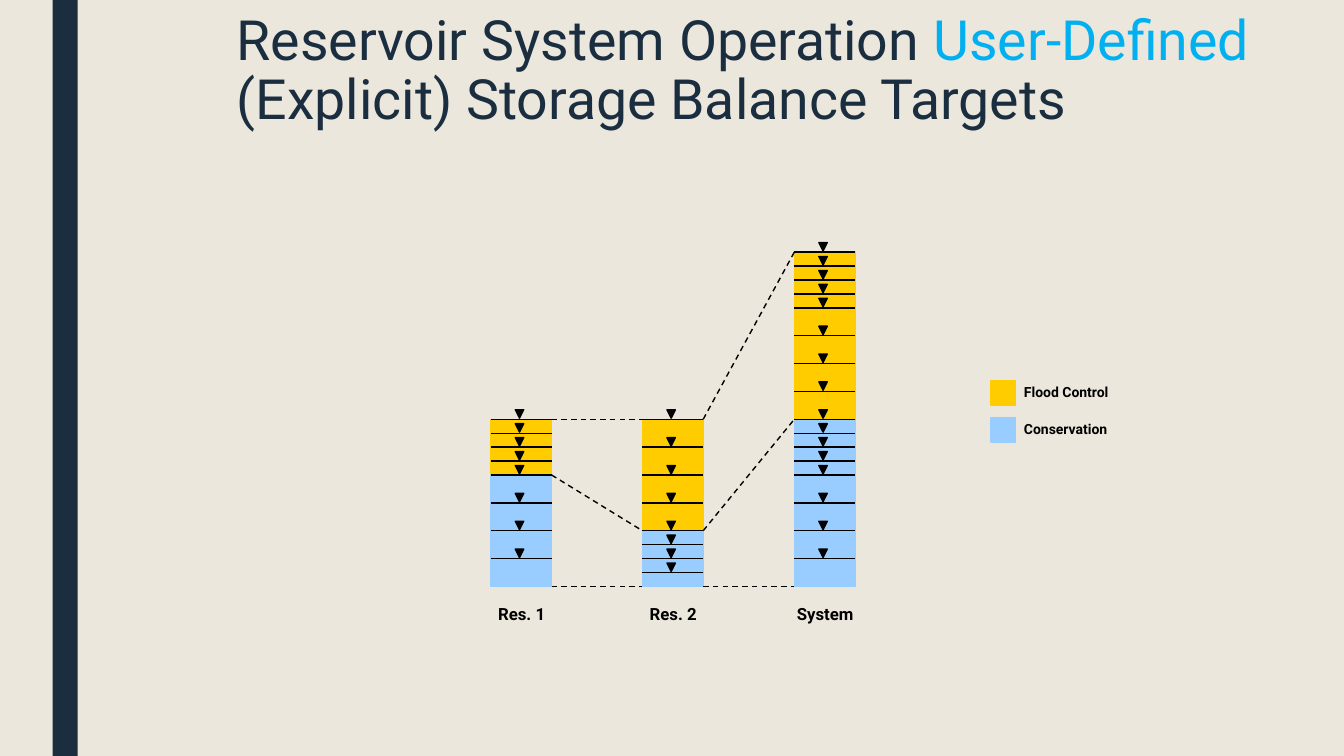
"""Build the reservoir storage balance slide."""
from dataclasses import dataclass
from itertools import accumulate

from lxml import etree
from pptx import Presentation
from pptx.dml import color
from pptx.enum import dml, shapes, text
from pptx.oxml import ns
from pptx.util import Pt


@dataclass(frozen=True)
class Theme:
    """Colours and type sizes of the slide."""
    background: str = "EBE7DD"
    navy: str = "1A2E40"
    accent: str = "00B0F0"
    flood: str = "FFCC00"
    conservation: str = "99CCFF"
    ink: str = "000000"
    font: str = "Roboto"
    title_size: float = 39.6
    label_size: float = 12
    legend_size: float = 10


THEME = Theme()
BASE = 418.9
STEP = 9.95
BAR_WIDTH = 43.4
SMALL, LARGE = [1] * 4, [2] * 4
RESERVOIRS = [
    ("Res. 1", 350.6, LARGE, SMALL),
    ("Res. 2", 458.9, SMALL, LARGE),
    ("System", 567.4, LARGE + SMALL, LARGE + SMALL),
]


def rgb(value):
    """Return a colour from its hex text."""
    return color.RGBColor.from_string(value)


def level(units):
    """Return the vertical position of a storage level above the base."""
    return BASE - STEP * units


def add_block(slide, left, top, width, height, fill, kind=shapes.MSO_SHAPE.RECTANGLE, outlined=True):
    """Add a filled shape, outlined in its own colour if asked."""
    shape = slide.shapes.add_shape(kind, Pt(left), Pt(top), Pt(width), Pt(height))
    shape.shadow.inherit = False
    shape.fill.solid()
    shape.fill.fore_color.rgb = rgb(fill)
    if outlined:
        shape.line.color.rgb = rgb(fill)
        shape.line.width = Pt(1)
    else:
        shape.line.fill.background()
    return shape


def add_line(slide, start, end, dashed=False):
    """Add a thin straight line between two points."""
    line = slide.shapes.add_connector(
        shapes.MSO_CONNECTOR.STRAIGHT, *(Pt(value) for value in start + end))
    line.line.color.rgb = rgb(THEME.ink)
    line.line.width = Pt(1)
    if dashed:
        line.line.dash_style = dml.MSO_LINE.DASH
    etree.SubElement(line._element.spPr, ns.qn("a:effectLst"))


def add_text(slide, left, top, width, height, runs, size, bold=False):
    """Add a text box of coloured runs and return its paragraph."""
    frame = slide.shapes.add_textbox(Pt(left), Pt(top), Pt(width), Pt(height)).text_frame
    frame.word_wrap = True
    paragraph = frame.paragraphs[0]
    for words, tint in runs:
        run = paragraph.add_run()
        run.text = words
        run.font.name = THEME.font
        run.font.size = Pt(size)
        run.font.bold = bold
        run.font.color.rgb = rgb(tint)
    return paragraph


def add_level_mark(slide, left, height):
    """Add a level line with a water surface triangle above it."""
    add_line(slide, (left, height), (left + BAR_WIDTH, height))
    triangle = add_block(slide, left + 17.5, height - 6.8, 6, 6, THEME.ink,
                         shapes.MSO_SHAPE.ISOSCELES_TRIANGLE)
    triangle.rotation = 180


def add_reservoir(slide, name, left, conservation, flood):
    """Add a reservoir bar with its two zones, level marks and name."""
    middle, top = level(sum(conservation)), level(sum(conservation + flood))
    add_block(slide, left, top, BAR_WIDTH, middle - top, THEME.flood)
    add_block(slide, left, middle, BAR_WIDTH, BASE - middle, THEME.conservation)
    for units in accumulate(conservation + flood):
        add_level_mark(slide, left, level(units))
    label = add_text(slide, left - 13, 427.7, 70, 21.6, [(name, THEME.ink)],
                     THEME.label_size, bold=True)
    label.alignment = text.PP_ALIGN.CENTER


def add_zone_links(slide, first, second):
    """Join the matching zone limits of two neighbouring bars."""
    limits = [(0, sum(lower), sum(lower + upper)) for _, _, lower, upper in (first, second)]
    for start, end in zip(*limits):
        add_line(slide, (first[1] + BAR_WIDTH, level(start)), (second[1], level(end)), dashed=True)


def add_legend(slide):
    """Add the key to the two storage zones."""
    entries = [("Flood Control", THEME.flood), ("Conservation", THEME.conservation)]
    for index, (name, fill) in enumerate(entries):
        top = 272.2 + 26.4 * index
        add_block(slide, 708, top, 17.3, 17.3, fill)
        add_text(slide, 724.3, top - 1.7, 94.3, 19.4, [(name, THEME.ink)],
                 THEME.legend_size, bold=True)


def main():
    """Build and save the slide."""
    presentation = Presentation()
    presentation.slide_width, presentation.slide_height = Pt(960), Pt(540)
    slide = presentation.slides.add_slide(presentation.slide_layouts[6])
    slide.background.fill.solid()
    slide.background.fill.fore_color.rgb = rgb(THEME.background)
    add_block(slide, 37.5, 0, 18, 540, THEME.navy, outlined=False)
    title = add_text(slide, 162, 5.8, 774, 85.7, [
        ("Reservoir System Operation ", THEME.navy),
        ("User-Defined ", THEME.accent),
        ("(Explicit) Storage Balance Targets", THEME.navy),
    ], THEME.title_size)
    title.line_spacing = 0.89
    for reservoir in RESERVOIRS:
        add_reservoir(slide, *reservoir)
    for first, second in zip(RESERVOIRS, RESERVOIRS[1:]):
        add_zone_links(slide, first, second)
    add_legend(slide)
    presentation.save("out.pptx")


if __name__ == "__main__":
    main()
